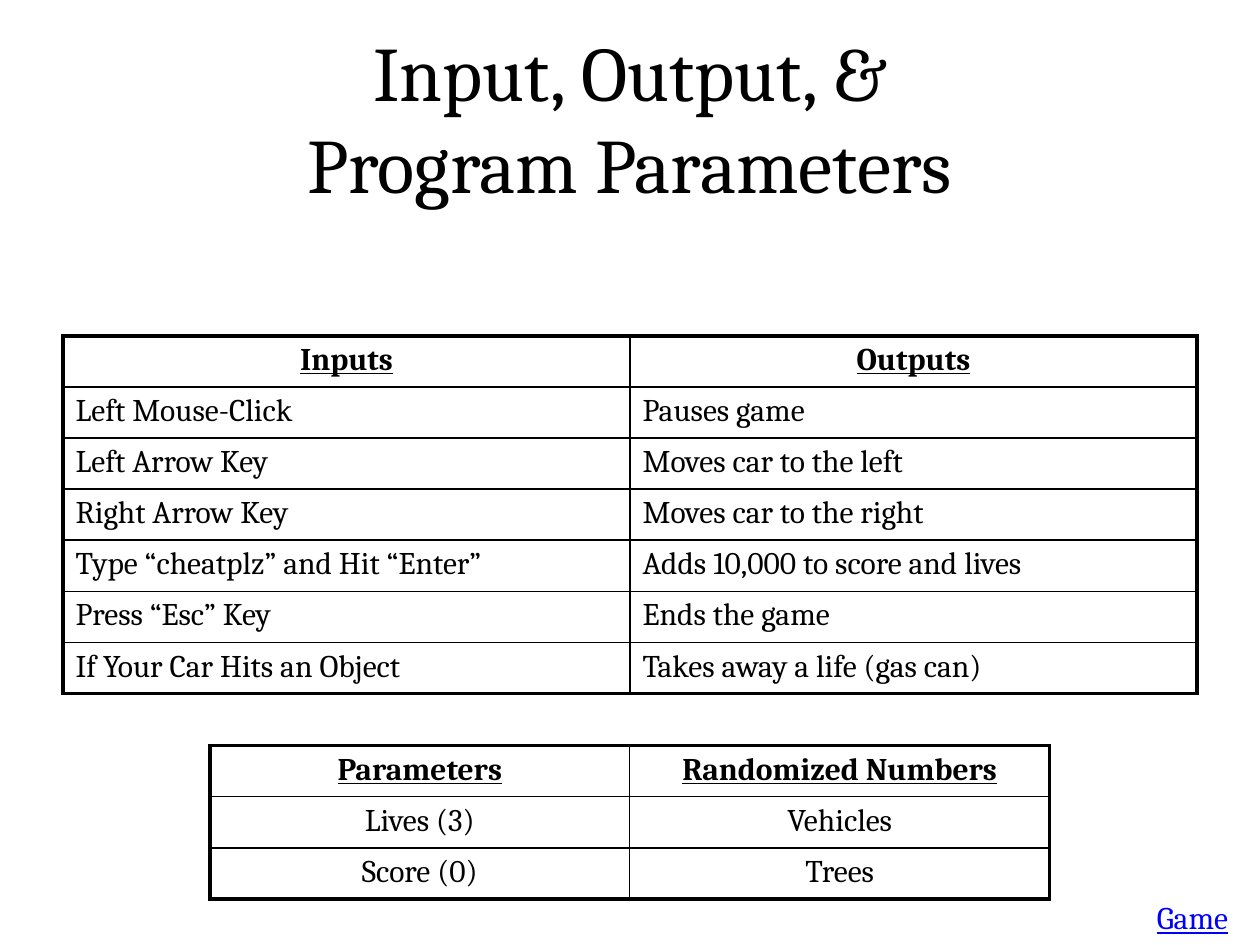
from lxml.etree import SubElement, Element
from pptx import Presentation
from pptx.dml.color import RGBColor
from pptx.enum.text import MSO_ANCHOR as Anchor, PP_ALIGN as Align
from pptx.oxml.ns import qn
from pptx.util import Cm, Pt

BLACK = RGBColor(0x00, 0x00, 0x00)
BLUE = RGBColor(0x00, 0x00, 0xFF)

CONTROLS = [
    ("Inputs", "Outputs"),
    ("Left Mouse-Click", "Pauses game"),
    ("Left Arrow Key", "Moves car to the left"),
    ("Right Arrow Key", "Moves car to the right"),
    ("Type “cheatplz” and Hit “Enter”", "Adds 10,000 to score and lives"),
    ("Press “Esc” Key", "Ends the game"),
    ("If Your Car Hits an Object", "Takes away a life (gas can)"),
]
SETTINGS = [
    ("Parameters", "Randomized Numbers"),
    ("Lives (3)", "Vehicles"),
    ("Score (0)", "Trees"),
]


class Deck:
    face = "Cambria"
    size = 18
    row = 1.03
    thin, thick = Pt(1), Pt(2.25)

    def __init__(self):
        self.prs = Presentation()
        self.prs.slide_width, self.prs.slide_height = Cm(25.4), Cm(19.05)
        self.slide = self.prs.slides.add_slide(self.prs.slide_layouts[5])

    def run(self, para, text, size=None, color=BLACK, bold=False, line=False):
        run = para.add_run()
        run.text = text
        font = run.font
        font.name, font.size = self.face, Pt(size or self.size)
        font.bold, font.underline = bold, line
        font.color.rgb = color

    def title(self, lines, left, top, width, height):
        box = self.slide.shapes.title
        box.left, box.top = Cm(left), Cm(top)
        box.width, box.height = Cm(width), Cm(height)
        frame = box.text_frame
        frame.vertical_anchor = Anchor.MIDDLE
        para = frame.paragraphs[0]
        para.alignment = Align.CENTER
        for i, text in enumerate(lines):
            if i:
                para.add_line_break()
            self.run(para, text, 44)

    def label(self, text, left, top, width, height):
        box = self.slide.shapes.add_textbox(
            Cm(left), Cm(top), Cm(width), Cm(height))
        self.run(box.text_frame.paragraphs[0], text, color=BLUE, line=True)

    def border(self, cell, widths):
        props = cell._tc.get_or_add_tcPr()
        for i, (side, width) in enumerate(zip("LRTB", widths)):
            edge = Element(qn(f"a:ln{side}"), w=str(width))
            fill = SubElement(edge, qn("a:solidFill"))
            SubElement(fill, qn("a:srgbClr"), val=str(BLACK))
            props.insert(i, edge)

    def table(self, rows, left, top, width, align):
        high, wide = len(rows), len(rows[0])
        grid = self.slide.shapes.add_table(
            high, wide, Cm(left), Cm(top), Cm(width),
            Cm(self.row * high)).table
        grid.first_row = grid.horz_banding = False
        for y, texts in enumerate(rows):
            grid.rows[y].height = Cm(self.row)
            for x, text in enumerate(texts):
                cell, head = grid.cell(y, x), y == 0
                cell.fill.background()
                # Thick outer frame, thin inner rules
                outer = (x == 0, x == wide - 1, head, y == high - 1)
                self.border(cell, [self.thick if o else self.thin
                                   for o in outer])
                para = cell.text_frame.paragraphs[0]
                para.alignment = Align.CENTER if head else align
                self.run(para, text, bold=head, line=head)


def main():
    deck = Deck()
    # Heading
    deck.title(["Input, Output, &", "Program Parameters"],
               1.27, 0.76, 22.86, 3.18)
    # Tables
    deck.table(CONTROLS, 1.27, 6.77, 22.86, Align.LEFT)
    deck.table(SETTINGS, 4.23, 15.03, 16.93, Align.CENTER)
    # Corner label
    deck.label("Game", 23.07, 17.98, 2.3, 1.03)
    deck.prs.save("out.pptx")


if __name__ == "__main__":
    main()
